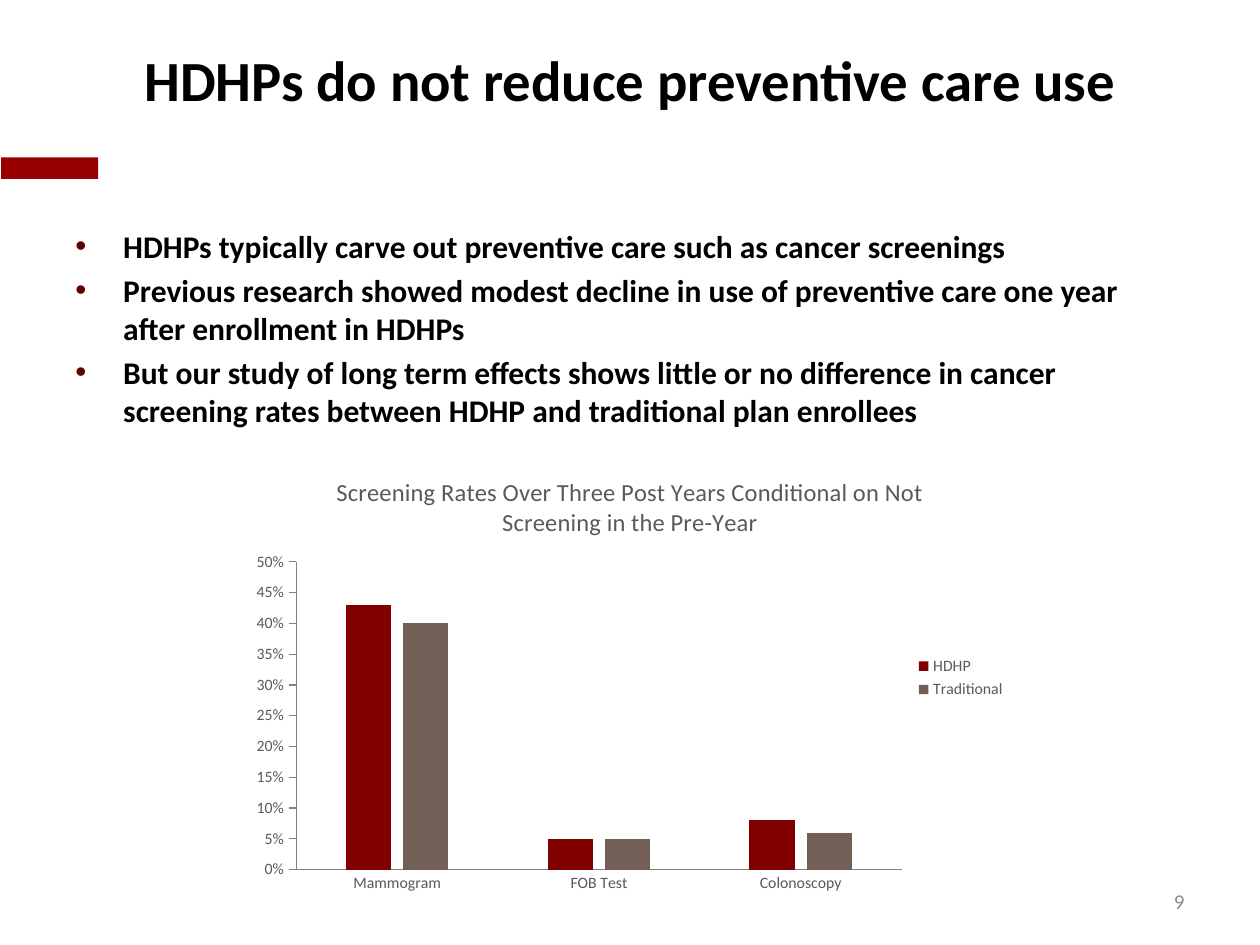
from dataclasses import dataclass

from lxml import etree
from pptx import Presentation
from pptx.chart.data import CategoryChartData
from pptx.dml.color import RGBColor
from pptx.enum.chart import XL_CHART_TYPE, XL_LEGEND_POSITION, XL_TICK_MARK
from pptx.enum.shapes import MSO_SHAPE
from pptx.enum.text import MSO_ANCHOR, PP_ALIGN
from pptx.oxml import parse_xml
from pptx.oxml.ns import nsdecls, qn
from pptx.util import Inches, Pt


@dataclass(frozen=True)
class Theme:
    font: str = "Calibri"
    text: RGBColor = RGBColor(0x00, 0x00, 0x00)
    accent: RGBColor = RGBColor(0x99, 0x00, 0x00)
    bullet: str = "610000"
    chart_text: RGBColor = RGBColor(0x59, 0x59, 0x59)
    axis: RGBColor = RGBColor(0x80, 0x80, 0x80)
    page_number: RGBColor = RGBColor(0x8C, 0x8C, 0x8C)
    series: tuple = (RGBColor(0x81, 0x00, 0x00), RGBColor(0x72, 0x60, 0x56))
    title_size: float = 32.4
    body_size: float = 18
    chart_title_size: float = 14
    number_size: float = 12
    label_size: float = 9


THEME = Theme()

BULLETS = (
    "HDHPs typically carve out preventive care such as cancer screenings",
    "Previous research showed modest decline in use of preventive care one year "
    "after enrollment in HDHPs",
    "But our study of long term effects shows little or no difference in cancer "
    "screening rates between HDHP and traditional plan enrollees",
)
CHART_TITLE = "Screening Rates Over Three Post Years Conditional on Not Screening in the Pre-Year"
TESTS = ("Mammogram", "FOB Test", "Colonoscopy")
RATES = {"HDHP": (0.43, 0.05, 0.08), "Traditional": (0.40, 0.05, 0.06)}


def set_font(font, size, color, bold=False):
    font.name = THEME.font
    font.size = Pt(size)
    font.color.rgb = color
    font.bold = bold


def add_text(page, box, text, size, color, align, bold=False):
    """Add one line of text, centred vertically in its box."""
    frame = page.shapes.add_textbox(*map(Inches, box)).text_frame
    frame.word_wrap = True
    frame.vertical_anchor = MSO_ANCHOR.MIDDLE
    frame.text = text
    para = frame.paragraphs[0]
    para.alignment = align
    set_font(para.runs[0].font, size, color, bold)


def add_accent_bar(page, box):
    bar = page.shapes.add_shape(MSO_SHAPE.RECTANGLE, *map(Inches, box))
    bar.shadow.inherit = False
    bar.fill.solid()
    bar.fill.fore_color.rgb = THEME.accent
    bar.line.fill.background()


def add_bullets(page, box, lines):
    frame = page.shapes.add_textbox(*map(Inches, box)).text_frame
    frame.word_wrap = True
    for index, line in enumerate(lines):
        para = frame.add_paragraph() if index else frame.paragraphs[0]
        para.text = line
        if index:
            para.space_before = Pt(0.2 * THEME.body_size)
        # Hanging indent with a coloured bullet
        properties = para._p.get_or_add_pPr()
        indent = Inches(0.38)
        properties.set("marL", str(indent))
        properties.set("indent", str(-indent))
        color = etree.SubElement(properties, qn("a:buClr"))
        etree.SubElement(color, qn("a:srgbClr"), val=THEME.bullet)
        etree.SubElement(properties, qn("a:buFont"), typeface="Arial")
        etree.SubElement(properties, qn("a:buChar"), char="•")
        set_font(para.runs[0].font, THEME.body_size, THEME.text, bold=True)


def style_axis(axis, tick):
    axis.has_major_gridlines = False
    axis.major_tick_mark = tick
    axis.minor_tick_mark = XL_TICK_MARK.NONE
    axis.format.line.color.rgb = THEME.axis
    axis.format.line.width = Pt(0.75)
    set_font(axis.tick_labels.font, THEME.label_size, THEME.chart_text)


def set_plot_area(chart, left, top, width, height):
    """Fix the inner plot area, in fractions of the chart."""
    area = chart._chartSpace.chart.plotArea
    for old in area.findall(qn("c:layout")):
        area.remove(old)
    area.insert(0, parse_xml(
        f'<c:layout {nsdecls("c")}><c:manualLayout><c:layoutTarget val="inner"/>'
        f'<c:xMode val="edge"/><c:yMode val="edge"/><c:x val="{left}"/><c:y val="{top}"/>'
        f'<c:w val="{width}"/><c:h val="{height}"/></c:manualLayout></c:layout>'))


def add_rates_chart(page, box):
    data = CategoryChartData(number_format="0%")
    data.categories = TESTS
    for name, values in RATES.items():
        data.add_series(name, values)
    chart = page.shapes.add_chart(
        XL_CHART_TYPE.COLUMN_CLUSTERED, *map(Inches, box), data).chart
    set_font(chart.font, 10, THEME.text)

    # Title and legend
    chart.has_title = True
    chart.chart_title.include_in_layout = False
    title = chart.chart_title.text_frame
    title.text = CHART_TITLE
    set_font(title.paragraphs[0].runs[0].font, THEME.chart_title_size, THEME.chart_text)
    chart.has_legend = True
    chart.legend.position = XL_LEGEND_POSITION.RIGHT
    chart.legend.include_in_layout = False
    set_font(chart.legend.font, THEME.label_size, THEME.chart_text)

    # Axes
    style_axis(chart.category_axis, XL_TICK_MARK.NONE)
    style_axis(chart.value_axis, XL_TICK_MARK.OUTSIDE)
    chart.value_axis.minimum_scale = 0
    chart.value_axis.maximum_scale = 0.5
    chart.value_axis.major_unit = 0.05
    chart.value_axis.tick_labels.number_format = "0%"
    chart.value_axis.tick_labels.number_format_is_linked = False

    # Columns
    plot = chart.plots[0]
    plot.vary_by_categories = False
    plot.gap_width = 219
    plot.overlap = -27
    for series, color in zip(plot.series, THEME.series):
        series.format.fill.solid()
        series.format.fill.fore_color.rgb = color
    set_plot_area(chart, 0.07, 0.24, 0.78, 0.69)


def main():
    deck = Presentation()
    deck.slide_width, deck.slide_height = Inches(10), Inches(7.5)
    page = deck.slides.add_slide(deck.slide_layouts[6])
    add_accent_bar(page, (0.01, 1.25, 0.77, 0.17))
    add_text(page, (0, 0, 10, 1.25), "HDHPs do not reduce preventive care use",
             THEME.title_size, THEME.text, PP_ALIGN.CENTER, bold=True)
    add_bullets(page, (0.5, 1.75, 9, 4.95), BULLETS)
    add_text(page, (7.17, 6.95, 2.33, 0.4), "9",
             THEME.number_size, THEME.page_number, PP_ALIGN.RIGHT)
    add_rates_chart(page, (1.92, 3.61, 6.16, 3.54))
    deck.save("out.pptx")


if __name__ == "__main__":
    main()
